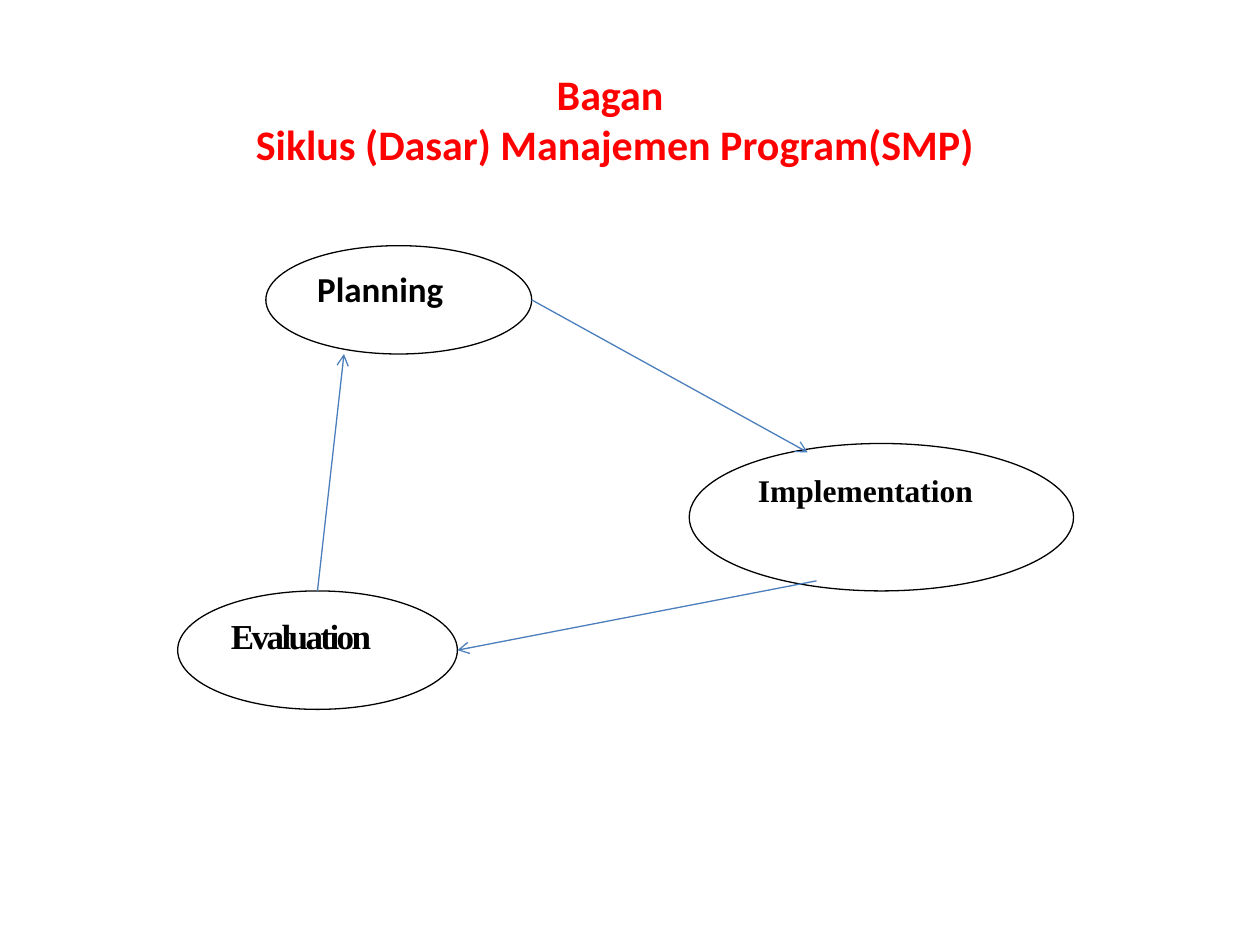
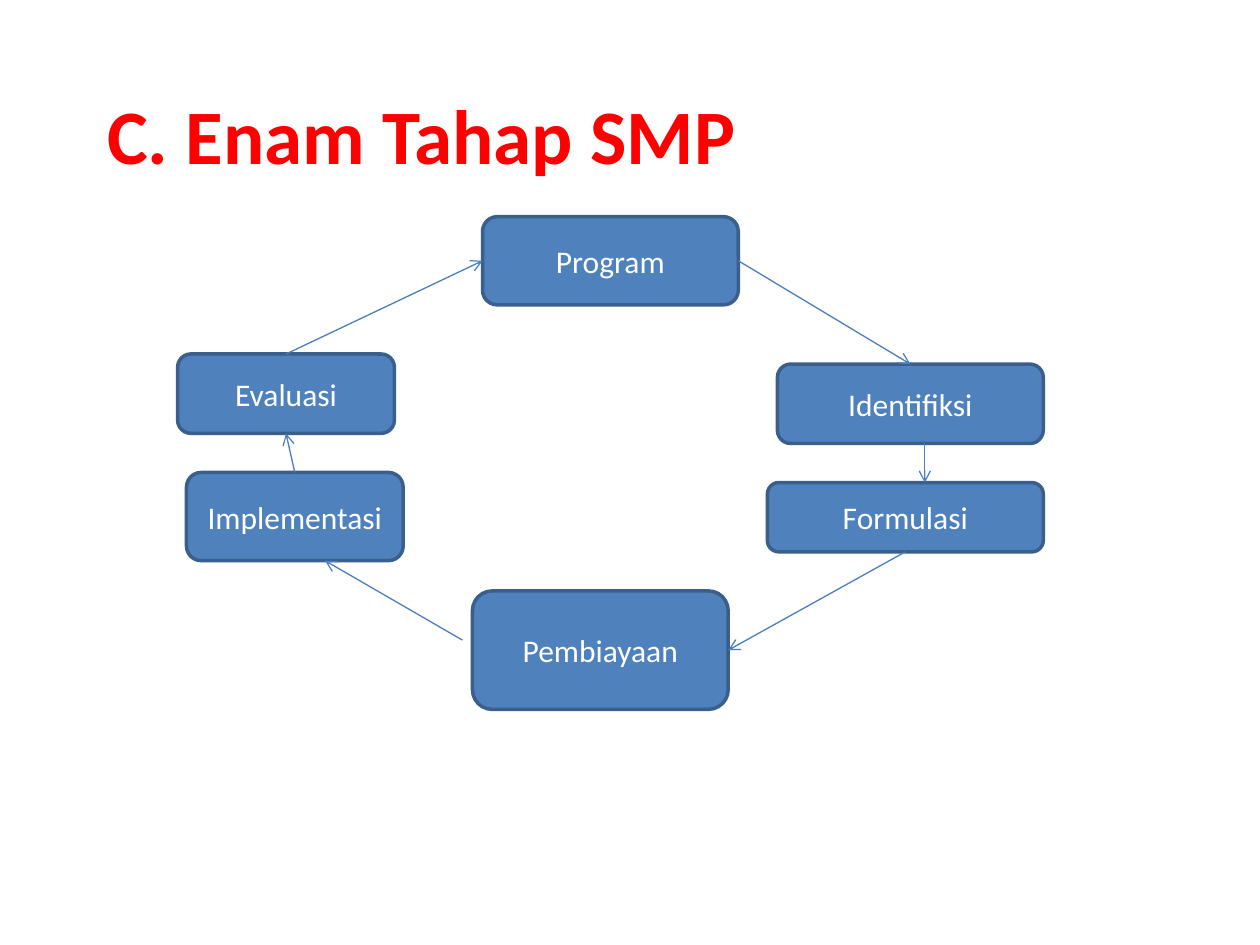
from lxml import etree
from pptx import Presentation
from pptx.dml.color import RGBColor
from pptx.enum.shapes import MSO_CONNECTOR, MSO_SHAPE
from pptx.enum.text import MSO_ANCHOR, PP_ALIGN
from pptx.oxml.ns import qn
from pptx.util import Inches, Pt

OVAL, ROUNDED = MSO_SHAPE.OVAL, MSO_SHAPE.ROUNDED_RECTANGLE
STRAIGHT = MSO_CONNECTOR.STRAIGHT
LEFT, CENTER = PP_ALIGN.LEFT, PP_ALIGN.CENTER
TOP, MIDDLE = MSO_ANCHOR.TOP, MSO_ANCHOR.MIDDLE

TITLE_ONLY = 5
SANS, SERIF = "Calibri", "Times New Roman"
RED, BLACK, WHITE = "FF0000", "000000", "FFFFFF"
BLUE, DARK_BLUE, ARROW_BLUE = "4F81BD", "3A5F8C", "4B7EBC"

# Fractions of a shape's width and height
SIDES = {"top": (0.5, 0), "right": (1, 0.5), "bottom": (0.5, 1), "left": (0, 0.5)}


def rgb(value):
    return RGBColor.from_string(value)


def point(x, y):
    return Inches(x), Inches(y)


def side(sp, name):
    """Return the middle of one side of a shape."""
    fx, fy = SIDES[name]
    return int(sp.left + fx * sp.width), int(sp.top + fy * sp.height)


class Deck:
    def __init__(self, prs):
        self.prs = prs
        self.s = None

    def add_slide(self):
        self.s = self.prs.slides.add_slide(self.prs.slide_layouts[TITLE_ONLY])

    def run(self, p, text, size, color, font=SANS, bold=False):
        r = p.add_run()
        r.text = text
        r.font.size = Pt(size)
        r.font.name = font
        r.font.bold = bold
        r.font.color.rgb = rgb(color)
        return r

    def title(self, lines, box, size, align):
        sp = self.s.shapes.title
        sp.left, sp.top, sp.width, sp.height = map(Inches, box)
        tf = sp.text_frame
        tf.vertical_anchor = MIDDLE
        p = tf.paragraphs[0]
        p.alignment = align
        for i, line in enumerate(lines):
            if i:
                p.add_line_break()
            self.run(p, line, size, RED, bold=True)

    def shape(self, kind, box, fill, line, width, align, anchor):
        sp = self.s.shapes.add_shape(kind, *map(Inches, box))
        sp.shadow.inherit = False
        sp.fill.solid()
        sp.fill.fore_color.rgb = rgb(fill)
        sp.line.color.rgb = rgb(line)
        sp.line.width = Pt(width)
        tf = sp.text_frame
        tf.word_wrap = True
        tf.vertical_anchor = anchor
        p = tf.paragraphs[0]
        p.alignment = align
        return sp, p

    def oval(self, text, box, size, font, spacing=0):
        sp, p = self.shape(OVAL, box, WHITE, BLACK, 0.75, LEFT, TOP)
        p.space_after = Pt(10)
        r = self.run(p, text, size, BLACK, font, bold=True)
        if spacing:
            r._r.get_or_add_rPr().set("spc", str(int(spacing * 100)))
        return sp

    def stage(self, text, box):
        sp, p = self.shape(ROUNDED, box, BLUE, DARK_BLUE, 2, CENTER, MIDDLE)
        self.run(p, text, 18, WHITE)
        return sp

    def arrow(self, start, end):
        cxn = self.s.shapes.add_connector(STRAIGHT, *start, *end)
        cxn.line.color.rgb = rgb(ARROW_BLUE)
        cxn.line.width = Pt(0.75)
        etree.SubElement(cxn.line._get_or_add_ln(), qn("a:tailEnd"), type="arrow")
        etree.SubElement(cxn._element.spPr, qn("a:effectLst"))


def basic_cycle(deck):
    deck.add_slide()
    deck.title(["Bagan ", "Siklus (Dasar) Manajemen Program(SMP)"],
               (0.23, 0.47, 9.3, 0.94), 24, CENTER)
    planning = deck.oval("Planning", (2.11, 1.95, 2.11, 0.86), 20, SANS)
    deck.oval("Implementation", (5.47, 3.52, 3.05, 1.17), 18, SERIF)
    evaluation = deck.oval("Evaluation", (1.41, 4.69, 2.22, 0.94), 20, SERIF, -1.5)

    deck.arrow(side(planning, "right"), point(6.41, 3.59))
    deck.arrow(point(6.48, 4.61), side(evaluation, "right"))
    deck.arrow(side(evaluation, "top"), point(2.73, 2.81))


def six_stages(deck):
    deck.add_slide()
    deck.title(["C. Enam Tahap SMP"], (0.75, 0.55, 8.5, 1.02), 44, LEFT)
    identification = deck.stage("Identifiksi", (6.17, 2.89, 2.11, 0.63))
    formulation = deck.stage("Formulasi", (6.09, 3.83, 2.19, 0.55))
    funding = deck.stage("Pembiayaan", (3.75, 4.69, 2.03, 0.94))
    evaluation = deck.stage("Evaluasi", (1.41, 2.81, 1.72, 0.63))
    implementation = deck.stage("Implementasi", (1.48, 3.75, 1.72, 0.7))
    program = deck.stage("Program", (3.83, 1.72, 2.03, 0.7))

    deck.arrow(side(program, "right"), side(identification, "top"))
    deck.arrow(point(7.34, 3.52), point(7.34, 3.83))
    deck.arrow(side(formulation, "bottom"), side(funding, "right"))
    deck.arrow(point(3.67, 5.08), point(2.58, 4.45))
    deck.arrow(side(implementation, "top"), side(evaluation, "bottom"))
    deck.arrow(side(evaluation, "top"), side(program, "left"))


def main():
    prs = Presentation()
    prs.slide_width, prs.slide_height = Inches(10), Inches(7.5)
    deck = Deck(prs)
    basic_cycle(deck)
    six_stages(deck)
    prs.save("out.pptx")


if __name__ == "__main__":
    main()
